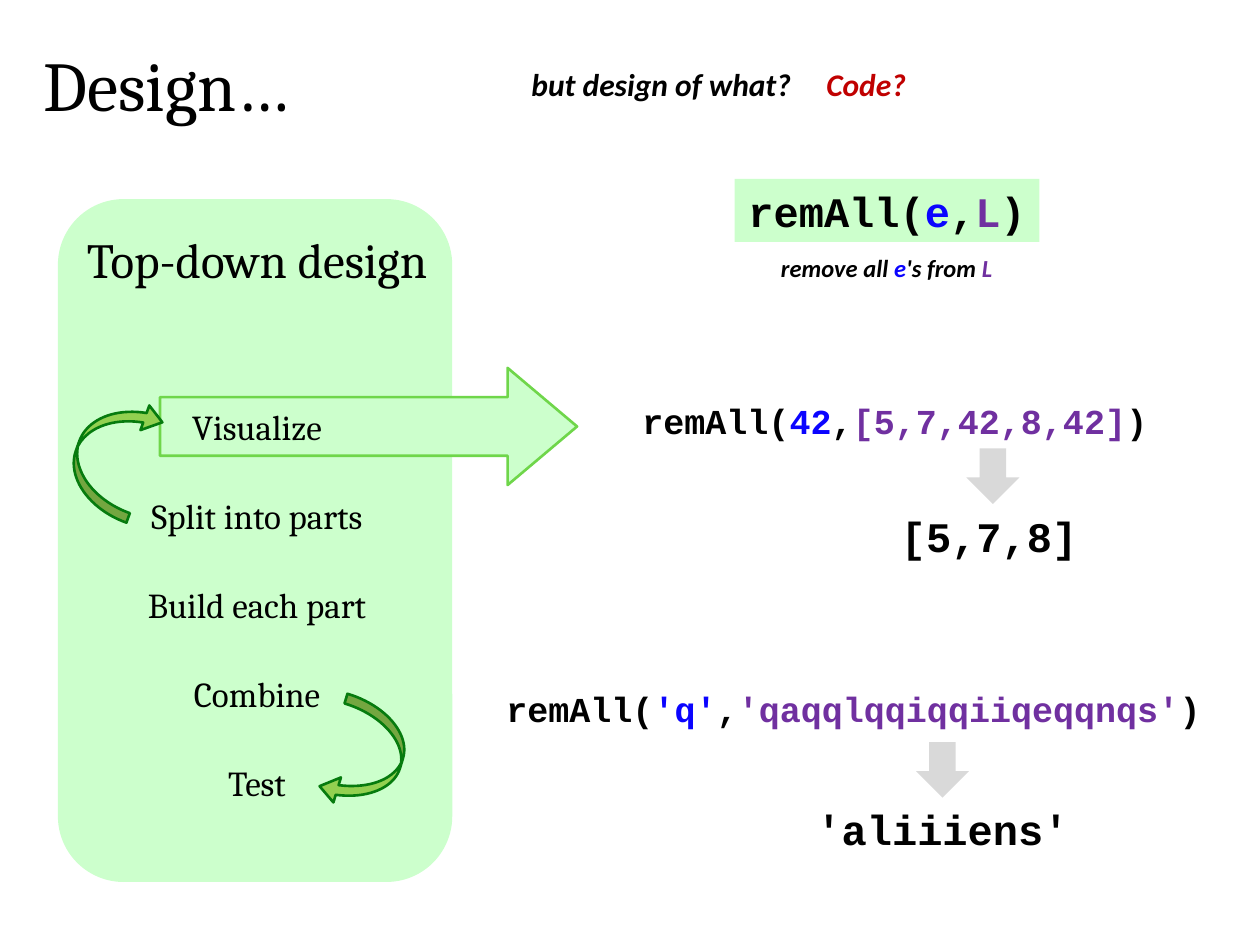
import pptx
import pptx.util
import pptx.dml.color
import pptx.enum.shapes
import pptx.enum.text

Inches, Pt = pptx.util.Inches, pptx.util.Pt
FORM = pptx.enum.shapes.MSO_SHAPE
ALIGN = pptx.enum.text.PP_ALIGN
COLORS = {
    "black": "000000", "blue": "0B04FF", "purple": "7030A0", "red": "C00000",
    "mint": "CCFFCC", "edge": "6FD64A", "lime": "92D050", "forest": "067B0E",
    "gray": "D9D9D9",
}


def color(name):
    return pptx.dml.color.RGBColor.from_string(COLORS[name])


def write(shape, parts, size, face, bold=False, italic=False, center=False):
    """Fill a shape with one line of (text, color) parts."""
    frame = shape.text_frame
    frame.word_wrap = True
    line = frame.paragraphs[0]
    line.alignment = ALIGN.CENTER if center else ALIGN.LEFT
    font = line.font
    font.name, font.size, font.bold, font.italic = face, Pt(size), bold, italic
    for text, tint in parts:
        run = line.add_run()
        run.text = text
        run.font.color.rgb = color(tint)


def label(slide, box, parts, size, face, **style):
    if isinstance(parts, str):
        parts = [(parts, "black")]
    shape = slide.shapes.add_textbox(*map(Inches, box))
    write(shape, parts, size, face, **style)


def block(slide, form, box, fill, edge=None, turn=0, adjust=()):
    shape = slide.shapes.add_shape(form, *map(Inches, box))
    shape.shadow.inherit = False
    shape.fill.solid()
    shape.fill.fore_color.rgb = color(fill)
    if edge:
        shape.line.color.rgb = color(edge)
        shape.line.width = Pt(1.5)
    else:
        shape.line.fill.background()
    shape.rotation = turn
    for i, value in enumerate(adjust):
        shape.adjustments[i] = value
    return shape


def call(first, second):
    return [("remAll(", "black"), (first, "blue"), (",", "black"),
            (second, "purple"), (")", "black")]


def main():
    deck = pptx.Presentation()
    deck.slide_width, deck.slide_height = Inches(10), Inches(7.5)
    slide = deck.slides.add_slide(deck.slide_layouts[6])
    serif, sans, mono = "Cambria", "Calibri", "Courier New"

    # Heading
    label(slide, (0.25, 0.28, 3.75, 0.77), "Design…", 40, serif)
    for left, width, text, tint in ((4.12, 2.4, "but design of what?", "black"),
                                    (6.46, 1, "Code?", "red")):
        label(slide, (left, 0.47, width, 0.4), [(text, tint)], 18, sans,
              bold=True, italic=True)

    # Design panel and its steps
    block(slide, FORM.ROUNDED_RECTANGLE, (0.46, 1.58, 3.13, 5.42), "mint")
    label(slide, (0.54, 1.77, 3, 0.57), "Top-down design", 28, serif,
          center=True)
    block(slide, FORM.RIGHT_ARROW, (1.27, 2.92, 3.31, 0.93), "mint", "edge",
          adjust=(0.5, 0.593))
    steps = ("Visualize", "Split into parts", "Build each part", "Combine",
             "Test")
    for i, step in enumerate(steps):
        label(slide, (0.94, 3.17 + 0.707 * i, 2.2, 0.44), step, 20, serif,
              center=True)

    # Loops between steps
    for box, turn in (((0.61, 3.13, 0.57, 0.95), 199.7),
                      ((2.62, 5.57, 0.57, 0.87), 16.8)):
        block(slide, FORM.CURVED_LEFT_ARROW, box, "lime", "forest", turn,
              (0.141, 0.364, 0.25))

    # Function and its purpose
    head = block(slide, FORM.RECTANGLE, (5.83, 1.42, 2.42, 0.5), "mint")
    write(head, call("e", "L"), 24, mono, bold=True, center=True)
    label(slide, (6.1, 1.96, 2, 0.34),
          [("remove all ", "black"), ("e", "blue"), ("'s from ", "black"),
           ("L", "purple")], 14, sans, bold=True, italic=True)

    # Example calls, each with its result below an arrow
    cases = (
        (5, 3.12, 4.4, call("42", "[5,7,42,8,42]"), 7.67, 3.56, 7.85,
         "[5,7,8]"),
        (3.92, 5.41, 5.87, call("'q'", "'qaqqlqqiqqiiqeqqnqs'"), 7.27, 5.89,
         7.48, "'aliiiens'"),
    )
    for left, top, width, parts, tip, drop, middle, result in cases:
        label(slide, (left, top, width, 0.44), parts, 20, mono, bold=True)
        block(slide, FORM.DOWN_ARROW, (tip, drop, 0.42, 0.44), "gray")
        label(slide, (middle - 1.2, drop + 0.44, 2.4, 0.5), result, 24, mono,
              bold=True, center=True)

    deck.save("out.pptx")


main()
